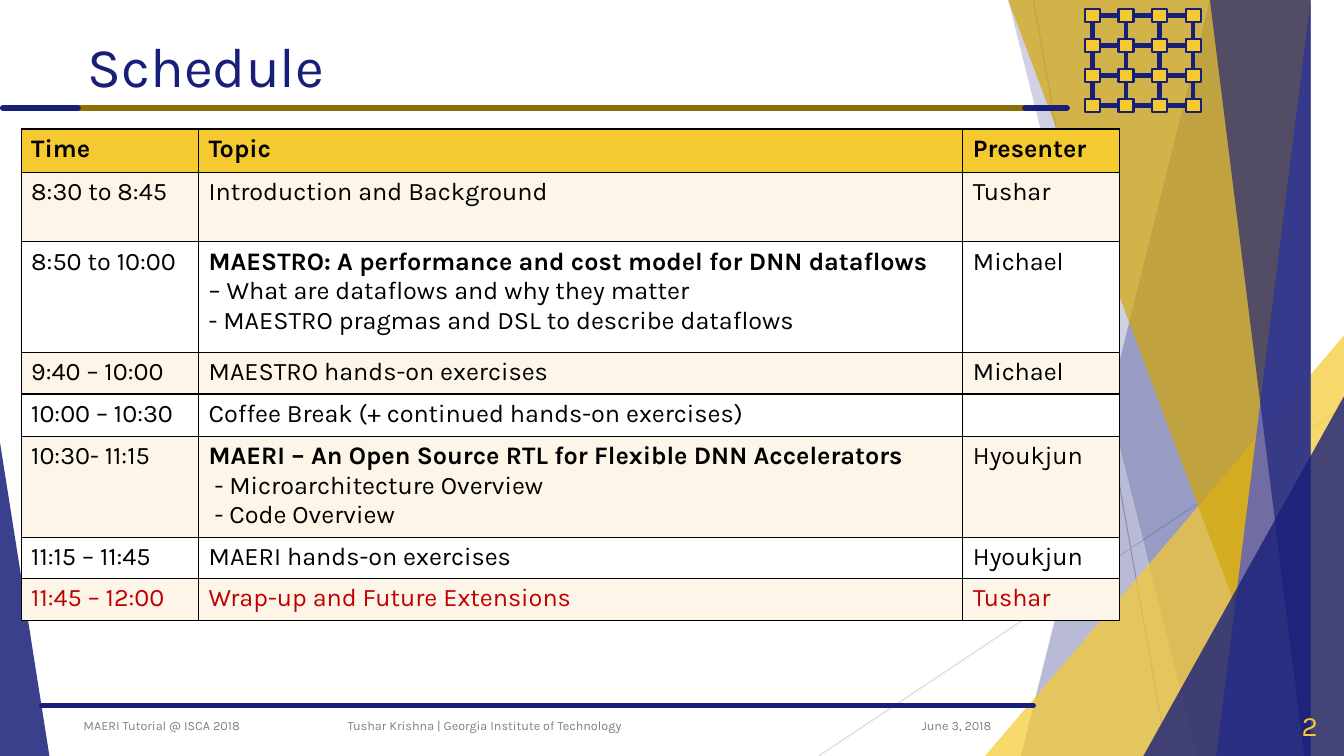
from dataclasses import dataclass

from pptx import Presentation
from pptx.dml.color import RGBColor
from pptx.enum import shapes, text
from pptx.oxml import ns, xmlchemy
from pptx.util import Inches, Pt

FONT = "Karla"
NAVY, GOLD, BROWN, GREY = "181F79", "F5CA31", "8C6F07", "808080"
BLACK, WHITE, CREAM, RED = "000000", "FFFFFF", "FDF6E8", "C00000"
TOP, RIGHT, BOTTOM = -0.01, 13.33, 7.5
SIDE_TOP, SIDE_LEFT, SIDE_BOTTOM, SIDE_RIGHT = range(4)


@dataclass
class Rule:
    start: tuple[float, float]
    end: tuple[float, float]
    color: str
    width: float


@dataclass
class Band:
    """A translucent band that fills the slide to its right edge."""
    top_left: float
    bottom_left: float
    color: str
    opacity: int


@dataclass
class Corner:
    """A translucent triangle standing on the bottom edge."""
    left: float
    top: float
    width: float
    peak: float
    color: str
    opacity: int


@dataclass
class Session:
    height: float
    time: str
    topic: list[str]
    presenter: str
    color: str = BLACK


HAIRLINES = [Rule((10.25, 0), (11.58, 7.5), "BFBFBF", 0.75),
             Rule((13.33, 4.03), (8.12, 7.5), "D9D9D9", 0.75)]
FACETS = [Band(12.28, 10.04, NAVY, 30), Band(10.5, 11.83, NAVY, 20),
          Corner(9.77, 3.33, 3.56, 1, GOLD, 72),
          Band(10.21, 12.91, "D2A60A", 70), Band(13.03, 11.92, "4853DB", 70),
          Band(11.96, 13.18, NAVY, 65),
          Corner(11.34, 3.93, 1.99, 1, NAVY, 80), Corner(0, 4.39, 0.49, 0, NAVY, 85)]
RULES = [Rule((0.41, 7), (10.25, 7), NAVY, 3.5),
         Rule((0.77, 1.07), (10.17, 1.07), BROWN, 4.5),
         Rule((0.03, 1.07), (0.77, 1.07), NAVY, 4.5),
         Rule((10.17, 1.07), (10.58, 1.07), NAVY, 4.5)]
COLUMN_WIDTHS = [1.76, 7.58, 1.55]
SESSIONS = [
    Session(0.43, "Time", ["Topic"], "Presenter"),
    Session(0.69, "8:30 to 8:45", ["Introduction and Background"], "Tushar"),
    Session(1.1, "8:50 to 10:00",
            ["MAESTRO: A performance and cost model for DNN dataflows",
             "– What are dataflows and why they matter",
             "- MAESTRO pragmas and DSL to describe dataflows"], "Michael"),
    Session(0.41, "9:40 – 10:00", ["MAESTRO hands-on exercises"], "Michael"),
    Session(0.42, "10:00 – 10:30", ["Coffee Break (+ continued hands-on exercises)"], ""),
    Session(0.98, "10:30- 11:15",
            ["MAERI – An Open Source RTL for Flexible DNN Accelerators",
             " - Microarchitecture Overview", " - Code Overview"], "Hyoukjun"),
    Session(0.41, "11:15 – 11:45", ["MAERI hands-on exercises"], "Hyoukjun"),
    Session(0.42, "11:45 – 12:00", ["Wrap-up and Future Extensions"], "Tushar", RED),
]


def rgb(color: str) -> RGBColor:
    return RGBColor.from_string(color)


def write(paragraph, content: str, *, size: float, color: str = BLACK,
          bold: bool = False, align=text.PP_ALIGN.LEFT) -> None:
    paragraph.alignment = align
    run = paragraph.add_run()
    run.text = content
    run.font.name, run.font.size, run.font.bold = FONT, Pt(size), bold
    run.font.color.rgb = rgb(color)


def add_label(slide, content: str, left: float, width: float, **style) -> None:
    frame = slide.shapes.add_textbox(
        Inches(left), Inches(7), Inches(width), Inches(0.4)).text_frame
    frame.word_wrap = True
    frame.vertical_anchor = text.MSO_ANCHOR.MIDDLE
    write(frame.paragraphs[0], content, **style)


def add_rule(slide, rule: Rule):
    connector = slide.shapes.add_connector(
        shapes.MSO_CONNECTOR.STRAIGHT, *map(Inches, rule.start + rule.end))
    connector.line.color.rgb = rgb(rule.color)
    connector.line.width = Pt(rule.width)
    properties = connector._element.spPr
    if rule.width > 3:
        properties.find(ns.qn("a:ln")).set("cap", "rnd")
    properties.append(xmlchemy.OxmlElement("a:effectLst"))
    return connector


def add_facet(slide, facet: Band | Corner) -> None:
    if isinstance(facet, Band):
        builder = slide.shapes.build_freeform(facet.top_left, TOP, scale=Inches(1))
        builder.add_line_segments(
            [(RIGHT, TOP), (RIGHT, BOTTOM), (facet.bottom_left, BOTTOM)])
        shape = builder.convert_to_shape()
    else:
        shape = slide.shapes.add_shape(
            shapes.MSO_SHAPE.ISOSCELES_TRIANGLE, Inches(facet.left), Inches(facet.top),
            Inches(facet.width), Inches(BOTTOM - facet.top))
        shape.adjustments[0] = facet.peak
    shape.shadow.inherit = False
    shape.line.fill.background()
    shape.fill.solid()
    shape.fill.fore_color.rgb = rgb(facet.color)
    alpha = xmlchemy.OxmlElement("a:alpha")
    alpha.set("val", str(facet.opacity * 1000))
    shape._element.spPr.find(".//" + ns.qn("a:srgbClr")).append(alpha)


def add_node(slide, left: float, top: float):
    node = slide.shapes.add_shape(shapes.MSO_SHAPE.RECTANGLE, Inches(left), Inches(top),
                                  Inches(0.15), Inches(0.13))
    node.shadow.inherit = False
    node.fill.solid()
    node.fill.fore_color.rgb = rgb(GOLD)
    node.line.color.rgb = rgb(NAVY)
    node.line.width = Pt(1.5)
    return node


def add_mesh(slide, size: int = 4) -> None:
    nodes = [[add_node(slide, 10.76 + 0.333 * column, 0.09 + 0.297 * row)
              for column in range(size)] for row in range(size)]
    links = [(row[0], SIDE_RIGHT, row[-1], SIDE_LEFT) for row in nodes]
    links += [(column[0], SIDE_BOTTOM, column[-1], SIDE_TOP) for column in zip(*nodes)]
    for first, first_side, last, last_side in links:
        wire = add_rule(slide, Rule((0, 0), (1, 1), NAVY, 3))
        wire.begin_connect(first, first_side)
        wire.end_connect(last, last_side)
        # Wires run behind the nodes
        nodes[0][0]._element.addprevious(wire._element)


def add_borders(cell) -> None:
    for side in ("a:lnL", "a:lnR", "a:lnT", "a:lnB"):
        border = xmlchemy.OxmlElement(side)
        border.set("w", str(Pt(1)))
        fill = xmlchemy.OxmlElement("a:solidFill")
        color = xmlchemy.OxmlElement("a:srgbClr")
        color.set("val", BLACK)
        fill.append(color)
        border.append(fill)
        cell._tc.get_or_add_tcPr().append(border)


def add_schedule(slide) -> None:
    table = slide.shapes.add_table(
        len(SESSIONS), len(COLUMN_WIDTHS), Inches(0.21), Inches(1.28),
        Inches(sum(COLUMN_WIDTHS)), Inches(sum(s.height for s in SESSIONS))).table
    for column, width in zip(table.columns, COLUMN_WIDTHS):
        column.width = Inches(width)
    for index, session in enumerate(SESSIONS):
        table.rows[index].height = Inches(session.height)
        background = GOLD if index == 0 else CREAM if index % 2 else WHITE
        entries = [[session.time], session.topic, [session.presenter]]
        for cell, lines in zip(table.rows[index].cells, entries):
            add_borders(cell)
            cell.fill.solid()
            cell.fill.fore_color.rgb = rgb(background)
            for number, line in enumerate(lines):
                frame = cell.text_frame
                paragraph = frame.add_paragraph() if number else frame.paragraphs[0]
                heading = index == 0 or (number == 0 and len(lines) > 1)
                write(paragraph, line, size=18, color=session.color, bold=heading)


def main() -> None:
    presentation = Presentation()
    presentation.slide_width, presentation.slide_height = Inches(RIGHT), Inches(BOTTOM)
    slide = presentation.slides.add_slide(presentation.slide_layouts[5])

    # Background facets, rules and mesh
    for hairline in HAIRLINES:
        add_rule(slide, hairline)
    for facet in FACETS:
        add_facet(slide, facet)
    for rule in RULES:
        add_rule(slide, rule)
    add_mesh(slide)

    # Title
    title = slide.shapes.title
    title.left, title.top, title.width, title.height = map(Inches, (0.77, 0.23, 9.4, 0.84))
    title.text_frame.vertical_anchor = text.MSO_ANCHOR.MIDDLE
    write(title.text_frame.paragraphs[0], "Schedule", size=40, color=NAVY)

    # Footer
    right = text.PP_ALIGN.RIGHT
    add_label(slide, "June 3, 2018", 8.42, 1.51, size=9, color=GREY, align=right)
    add_label(slide, "MAERI Tutorial @ ISCA 2018", 0.73, 2.5, size=9, color=GREY)
    add_label(slide, "Tushar Krishna | Georgia Institute of Technology", 3.35, 4.27,
              size=9, color=GREY)
    add_label(slide, "2", 12.42, 0.75, size=20, color=GOLD, align=right)

    # Schedule table
    add_schedule(slide)
    presentation.save("out.pptx")


if __name__ == "__main__":
    main()
